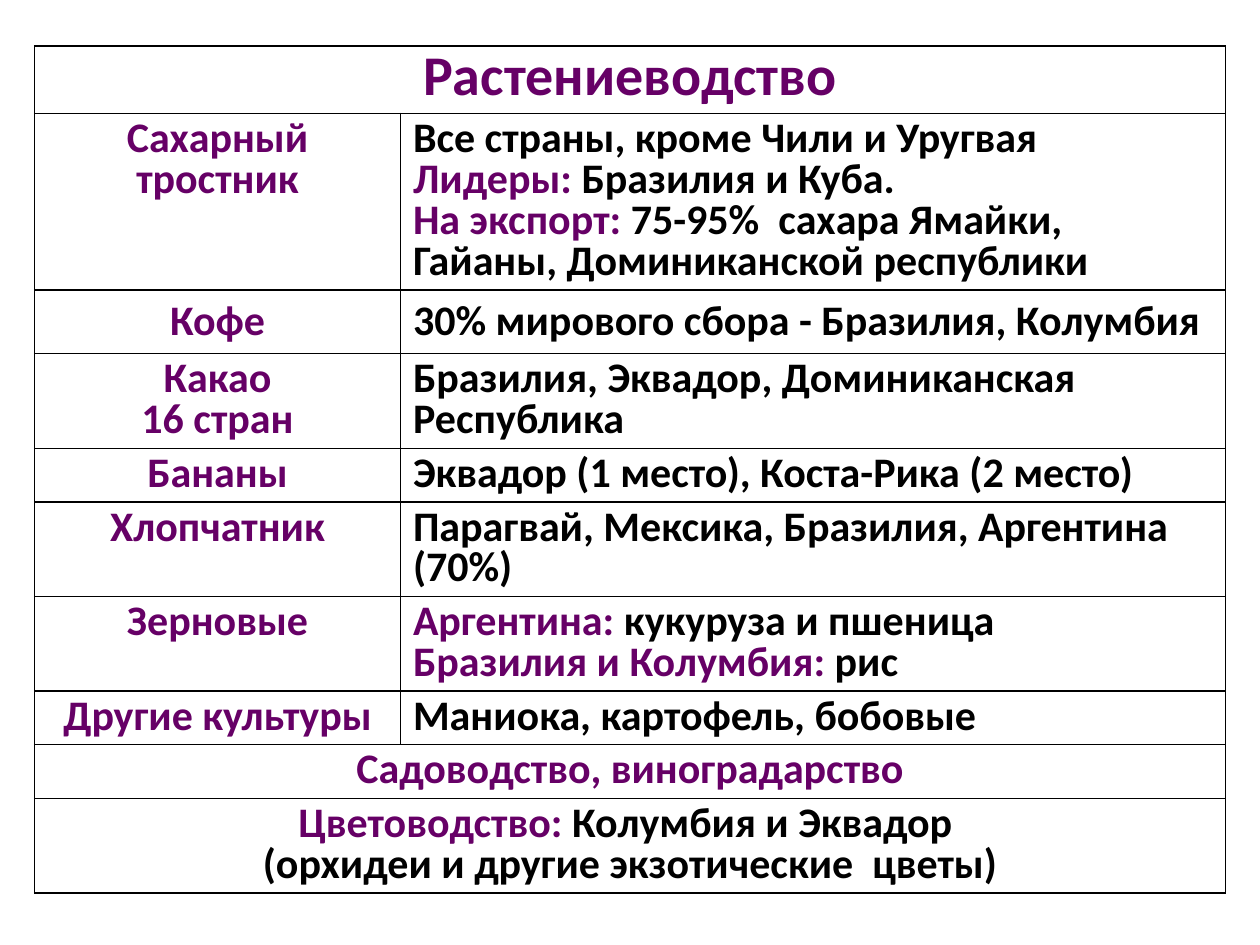
from dataclasses import dataclass

from lxml import etree
from pptx import Presentation
from pptx.dml.color import RGBColor
from pptx.enum.text import PP_ALIGN
from pptx.oxml.ns import qn
from pptx.util import Pt

CENTER, LEFT = PP_ALIGN.CENTER, PP_ALIGN.LEFT


@dataclass(frozen=True)
class Theme:
    font: str = "Calibri"
    accent: str = "660066"
    ink: str = "000000"
    heading: int = 32
    body: int = 24
    border: int = 1
    tight: float = 0.8


THEME = Theme()


def accent(text):
    return text, THEME.accent


def ink(text):
    return text, THEME.ink


HEADING = [[accent("Растениеводство")]]
CROPS = [
    ([[accent("Сахарный")], [accent("тростник")]],
     [[ink("Все страны, кроме Чили и Уругвая")],
      [accent("Лидеры: "), ink("Бразилия и Куба.")],
      [accent("На экспорт: "),
       ink("75-95%  сахара Ямайки, Гайаны, Доминиканской республики")]]),
    ([[accent("Кофе")]],
     [[ink("30% мирового сбора - Бразилия, Колумбия")]]),
    ([[accent("Какао")], [accent("16 стран")]],
     [[ink("Бразилия, Эквадор, Доминиканская Республика")]]),
    ([[accent("Бананы")]],
     [[ink("Эквадор (1 место), Коста-Рика (2 место)")]]),
    ([[accent("Хлопчатник")]],
     [[ink("Парагвай, Мексика, Бразилия, Аргентина (70%)")]]),
    ([[accent("Зерновые")]],
     [[accent("Аргентина: "), ink("кукуруза и пшеница")],
      [accent("Бразилия и Колумбия: "), ink("рис")]]),
    ([[accent("Другие культуры")]],
     [[ink("Маниока, картофель, бобовые")]]),
]
FOOTERS = [
    [[accent("Садоводство, виноградарство")]],
    [[accent("Цветоводство: "), ink("Колумбия и Эквадор ")],
     [ink("(орхидеи и другие экзотические  цветы)")]],
]
ROWS = [(HEADING,), *CROPS, *((footer,) for footer in FOOTERS)]
COFFEE_ROW = 2


class SlideBuilder:
    def __init__(self, theme, slide):
        self.theme = theme
        self.s = slide

    def cell_text(self, cell, paragraphs, align, size, spacing):
        tf = cell.text_frame
        for i, runs in enumerate(paragraphs):
            p = tf.add_paragraph() if i else tf.paragraphs[0]
            p.alignment = align
            if spacing:
                p.line_spacing = spacing
            for text, color in runs:
                r = p.add_run()
                r.text = text
                fmt = {"name": self.theme.font, "size": Pt(size), "bold": True}
                for name, value in fmt.items():
                    setattr(r.font, name, value)
                r.font.color.rgb = RGBColor.from_string(color)

    def cell_frame(self, cell):
        tc_pr = cell._tc.get_or_add_tcPr()
        for side in ("a:lnL", "a:lnR", "a:lnT", "a:lnB"):
            ln = etree.SubElement(tc_pr, qn(side), w=str(Pt(self.theme.border)))
            fill = etree.SubElement(ln, qn("a:solidFill"))
            etree.SubElement(fill, qn("a:srgbClr"), val=self.theme.ink)
        cell.fill.background()

    def table(self, rows, left, top, widths, heights, height):
        sp = self.s.shapes.add_table(len(rows), len(widths), Pt(left), Pt(top),
                                     Pt(sum(widths)), Pt(height))
        table = sp.table
        table.first_row = table.horz_banding = False
        for column, width in zip(table.columns, widths):
            column.width = Pt(width)
        for row, row_height in zip(table.rows, heights):
            row.height = Pt(row_height)
        for i, texts in enumerate(rows):
            cells = [table.cell(i, j) for j in range(len(widths))]
            for cell in cells:
                self.cell_frame(cell)
            if len(texts) == 1:
                cells[0].merge(cells[-1])
            size = self.theme.body if i else self.theme.heading
            spacing = None if i == COFFEE_ROW else self.theme.tight
            for j, paragraphs in enumerate(texts):
                self.cell_text(cells[j], paragraphs, LEFT if j else CENTER,
                               size, spacing)
        sp.height = Pt(height)


def main():
    prs = Presentation()
    prs.slide_width, prs.slide_height = Pt(720), Pt(540)
    builder = SlideBuilder(THEME, prs.slides.add_slide(prs.slide_layouts[6]))
    heights = [26 if i == COFFEE_ROW else 29.5 for i in range(len(ROWS))]
    builder.table(ROWS, 19.8, 26.2, (209, 471.5), heights, 477.5)
    prs.save("out.pptx")


if __name__ == "__main__":
    main()
